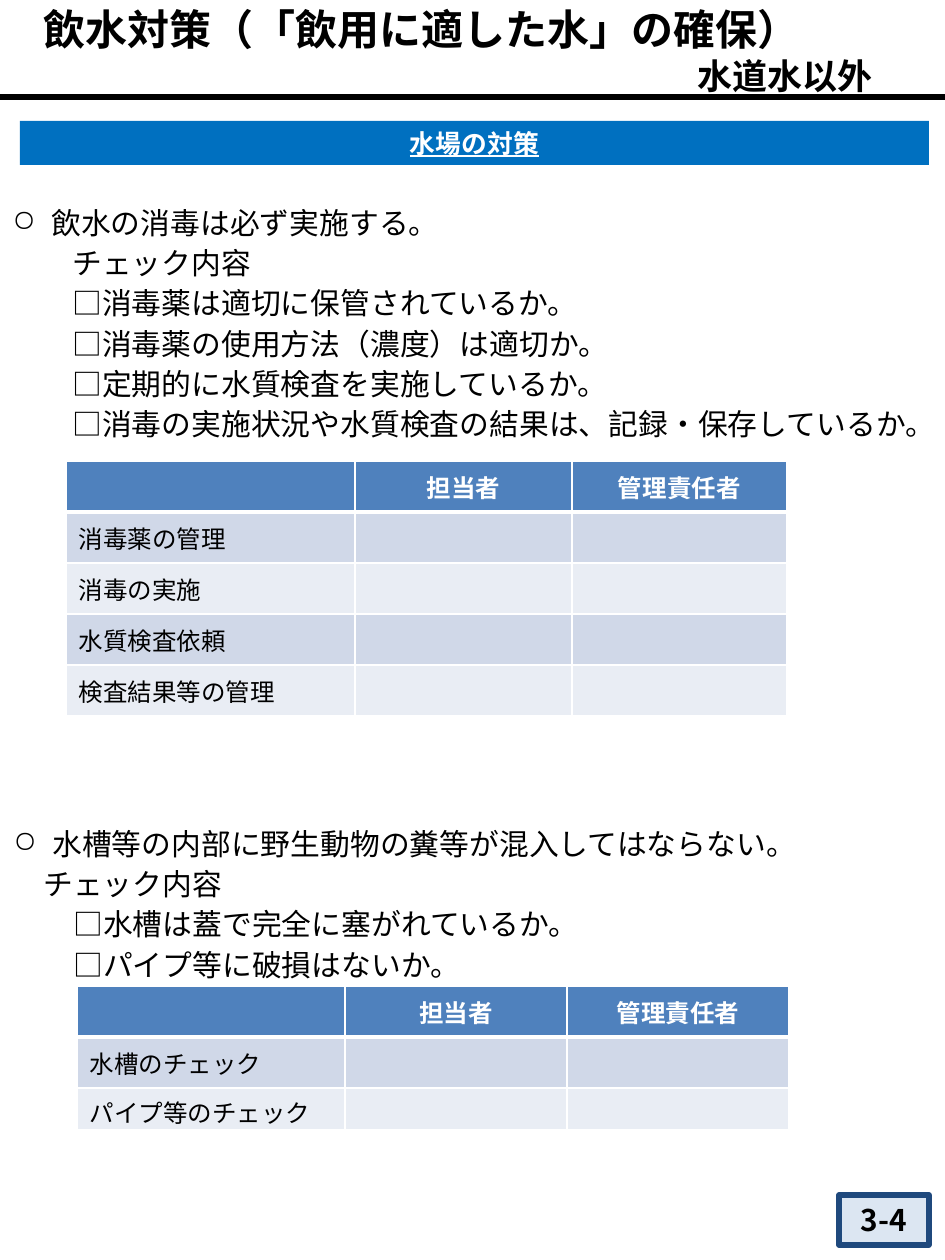
from dataclasses import dataclass

from lxml import etree
from pptx import Presentation
from pptx import util as u
from pptx.dml.color import RGBColor
from pptx.enum import shapes, text
from pptx.oxml.ns import qn

PX = 914400 / 126  # EMU in one px


@dataclass(frozen=True)
class Theme:
    font: str = "Noto Sans CJK JP"
    banner_font: str = "Arial"
    black: str = "000000"
    white: str = "FFFFFF"
    banner: str = "0070C0"
    page_fill: str = "DCE6F2"
    page_edge: str = "1F497D"
    header: str = "4F81BD"
    bands: tuple = ("D0D8E8", "E9EDF4")
    title: float = 24
    subtitle: float = 20
    body: float = 17
    banner_size: float = 14.7
    cell: float = 14
    leading: float = 23


THEME = Theme()
EM = round(THEME.body / 72 * 126)  # one full-width character of body text, px


def px(*lengths):
    return [u.Emu(round(length * PX)) for length in lengths]


def rgb(colour):
    return RGBColor.from_string(colour)


def write(paragraph, words, size, colour=THEME.black, bold=False, font=THEME.font):
    paragraph.text = words
    run = paragraph.runs[0]
    run.font.size = u.Pt(size)
    run.font.color.rgb = rgb(colour)
    run.font.bold = bold
    run.font.name = font
    etree.SubElement(run.font._element, qn("a:ea"), typeface=font)
    return run


def add_rule(slide, y, width):
    rule = slide.shapes.add_connector(
        shapes.MSO_CONNECTOR.STRAIGHT, *px(0, y, width, y))
    rule.line.color.rgb = rgb(THEME.black)
    rule.line.width = u.Pt(3)
    etree.SubElement(rule._element.spPr, qn("a:effectLst"))


def add_title(slide, box, title, subtitle):
    frame = slide.shapes.add_textbox(*px(*box)).text_frame
    frame.word_wrap = True
    frame.vertical_anchor = text.MSO_ANCHOR.MIDDLE
    frame.margin_left, frame.margin_right = px(15, 15)
    frame.margin_top, frame.margin_bottom = px(8, 8)
    write(frame.paragraphs[0], title, THEME.title, bold=True)
    second = frame.add_paragraph()
    write(second, subtitle, THEME.subtitle, bold=True)
    second.alignment = text.PP_ALIGN.RIGHT


def add_label(slide, box, words, fill, size, colour, font=THEME.font, edge=None):
    label = slide.shapes.add_shape(shapes.MSO_SHAPE.RECTANGLE, *px(*box))
    label.shadow.inherit = False
    label.fill.solid()
    label.fill.fore_color.rgb = rgb(fill)
    if edge:
        label.line.color.rgb = rgb(edge)
        label.line.width = u.Pt(3)
    else:
        label.line.fill.background()
    frame = label.text_frame
    frame.word_wrap = True
    frame.vertical_anchor = text.MSO_ANCHOR.MIDDLE
    frame.paragraphs[0].alignment = text.PP_ALIGN.CENTER
    return write(frame.paragraphs[0], words, size, colour, True, font)


def indent(paragraph, left, first=0, bullet=None):
    left, first = px(left, first)
    props = paragraph._p.get_or_add_pPr()
    props.set("marL", str(left))
    props.set("indent", str(first))
    if bullet:
        etree.SubElement(props, qn("a:buChar"), char=bullet)


def add_checklist(slide, box, rule, caption_indent, checks):
    frame = slide.shapes.add_textbox(*px(*box)).text_frame
    frame.word_wrap = True
    lines = [(rule, 39, -39, "○"), ("チェック内容", caption_indent, 0, None)]
    lines += [("□" + check, 2 * EM, 0, None) for check in checks]
    for number, (words, left, first, bullet) in enumerate(lines):
        paragraph = frame.add_paragraph() if number else frame.paragraphs[0]
        write(paragraph, words, THEME.body)
        paragraph.line_spacing = u.Pt(THEME.leading)
        indent(paragraph, left, first, bullet)


def set_borders(cell, top, bottom):
    props = cell._tc.get_or_add_tcPr()
    for side, width in (("L", 1), ("R", 1), ("T", top), ("B", bottom)):
        line = etree.SubElement(props, qn("a:ln" + side), w=str(u.Pt(width)))
        fill = etree.SubElement(line, qn("a:solidFill"))
        etree.SubElement(fill, qn("a:srgbClr"), val=THEME.white)


def add_duty_table(slide, left, top, columns, heights, duties):
    rows = [("", "担当者", "管理責任者")] + [(duty, "", "") for duty in duties]
    table = slide.shapes.add_table(
        len(rows), len(columns), *px(left, top, sum(columns), sum(heights))).table
    for column, width in zip(table.columns, px(*columns)):
        column.width = width
    for row, height in zip(table.rows, px(*heights)):
        row.height = height
    for r, row in enumerate(rows):
        is_header = r == 0
        for c, words in enumerate(row):
            cell = table.cell(r, c)
            cell.vertical_anchor = text.MSO_ANCHOR.MIDDLE
            # A heavier line parts the header from the duties
            set_borders(cell, 3 if r == 1 else 1, 3 if is_header else 1)
            cell.fill.solid()
            cell.fill.fore_color.rgb = rgb(
                THEME.header if is_header else THEME.bands[(r - 1) % 2])
            paragraph = cell.text_frame.paragraphs[0]
            if is_header:
                paragraph.alignment = text.PP_ALIGN.CENTER
            if words:
                write(paragraph, words, THEME.cell,
                      THEME.white if is_header else THEME.black, is_header)
            else:
                etree.SubElement(paragraph._p, qn("a:endParaRPr"),
                                 sz=str(THEME.cell * 100))


def main():
    deck = Presentation()
    deck.slide_width, deck.slide_height = px(945, 1260)
    slide = deck.slides.add_slide(deck.slide_layouts[6])

    # Heading
    add_rule(slide, 97, 945)
    add_title(slide, (29, -5, 859, 110),
              "飲水対策（「飲用に適した水」の確保）", "水道水以外")
    banner = add_label(slide, (20, 121, 909, 44), "水場の対策", THEME.banner,
                       THEME.banner_size, THEME.white, THEME.banner_font)
    banner.font.underline = True

    # Disinfection
    add_checklist(slide, (0, 194, 945, 252), "飲水の消毒は必ず実施する。", 2 * EM, [
        "消毒薬は適切に保管されているか。",
        "消毒薬の使用方法（濃度）は適切か。",
        "定期的に水質検査を実施しているか。",
        "消毒の実施状況や水質検査の結果は、記録・保存しているか。",
    ])
    add_duty_table(slide, 66, 461, (289, 217, 215), [51] * 5, [
        "消毒薬の管理", "消毒の実施", "水質検査依頼", "検査結果等の管理"])

    # Water tanks
    add_checklist(slide, (1, 815, 945, 292),
                  "水槽等の内部に野生動物の糞等が混入してはならない。", EM,
                  ["水槽は蓋で完全に塞がれているか。", "パイプ等に破損はないか。"])
    add_duty_table(slide, 77, 986, (268, 222, 222), (51, 51, 39),
                   ["水槽のチェック", "パイプ等のチェック"])

    # Page number
    add_label(slide, (839, 1195, 90, 50), "3-4", THEME.page_fill,
              THEME.body, THEME.black, edge=THEME.page_edge)

    deck.save("out.pptx")


if __name__ == "__main__":
    main()
